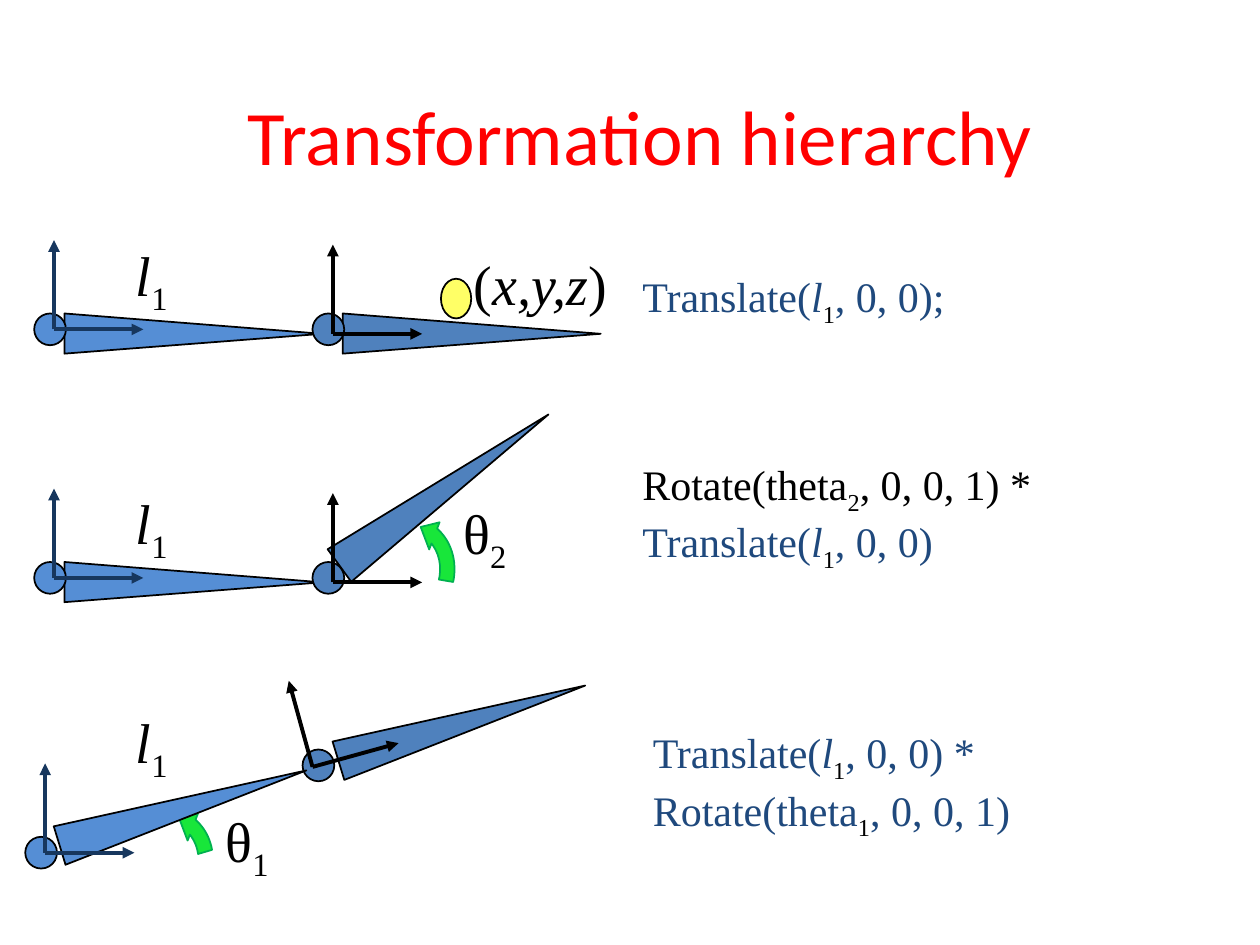
import math
from lxml import etree
from pptx import Presentation
from pptx import util as u
from pptx.dml.color import RGBColor
from pptx.enum import shapes, text
from pptx.oxml import ns

Cm, Pt = u.Cm, u.Pt
SERIF = "Times New Roman"
BLACK, NAVY, BLUE = "000000", "17375E", "1F497D"
LIGHT, DARK = "558ED5", "4F81BD"
MOVE = [("Translate(", ""), ("l", "i"), ("1", "s")]


def tint(part, color):
    """Give a fill or a font colour its hex value."""
    if hasattr(part, "solid"):
        part.solid()
        part = part.fore_color
    part.rgb = RGBColor.from_string(color)


def paint(shape, fill, line=BLACK):
    shape.shadow.inherit = False
    tint(shape.fill, fill)
    tint(shape.line.fill, line)
    shape.line.width = Pt(1)


def write(frame, lines, size=24, color=BLACK, font=SERIF, sub=BLACK, align=None):
    """Fill a frame; each line is a list of (words, style), i italic, s subscript."""
    for n, line in enumerate(lines):
        para = frame.paragraphs[0] if n == 0 else frame.add_paragraph()
        para.alignment = align
        for words, style in line:
            run = para.add_run()
            run.text = words
            run.font.name, run.font.size = font, Pt(size)
            tint(run.font.color, sub if style == "s" else color)
            if style == "i":
                run.font.italic = True
            if style == "s":
                run._r.get_or_add_rPr().set("baseline", "-25000")


def label(slide, x, y, w, h, lines, **look):
    box = slide.shapes.add_textbox(Cm(x), Cm(y), Cm(w), Cm(h))
    box.text_frame.word_wrap = False
    box.text_frame.auto_size = text.MSO_AUTO_SIZE.SHAPE_TO_FIT_TEXT
    write(box.text_frame, lines, **look)


def oval(slide, x, y, w, h, fill):
    kind = shapes.MSO_SHAPE.OVAL
    paint(slide.shapes.add_shape(kind, Cm(x), Cm(y), Cm(w), Cm(h)), fill)


def arrow(slide, x, y, dx, dy, color):
    line = slide.shapes.add_connector(
        shapes.MSO_CONNECTOR.STRAIGHT, Cm(x), Cm(y), Cm(x + dx), Cm(y + dy))
    tint(line.line.fill, color)
    line.line.width = Pt(2.25)
    etree.SubElement(line.line._get_or_add_ln(), ns.qn("a:tailEnd"), type="triangle")
    etree.SubElement(line._element.spPr, ns.qn("a:effectLst"))


def axes(slide, x, y, color, tilt=0, size=1.8):
    a = math.radians(tilt)
    dx, dy = size * math.cos(a), size * math.sin(a)
    arrow(slide, x, y, dx, -dy, color)
    arrow(slide, x, y, -dy, -dx, color)


def limb(slide, x, y, fill, ink, hub, arm=(0.61, 0), turn=0, tilt=0):
    """Draw a joint at x, y with its tapered arm and its axes."""
    left, top = x + arm[0], y + arm[1]
    pen = slide.shapes.build_freeform(Cm(left), Cm(top))
    pen.add_line_segments([(Cm(left), Cm(top + 0.81)), (Cm(left + 5.2), Cm(top + 0.41))])
    wedge = pen.convert_to_shape()
    wedge.rotation = -turn
    paint(wedge, fill)
    oval(slide, x, y, 0.64, 0.64, fill)
    axes(slide, x + hub[0], y + hub[1], ink, tilt)


def base(slide, x, y, **pose):
    limb(slide, x, y, LIGHT, NAVY, (0.4, 0.32), **pose)


def tip(slide, x, y, hub=(0.41, 0.41), **pose):
    limb(slide, x, y, DARK, BLACK, hub, **pose)


def length(slide, x, y):
    label(slide, x, y, 1.22, 1.63, [[("l", "i"), ("1", "s")]], size=32)


def angle(slide, x, y, end, mark, dx, dy):
    """Draw a curved arrow, and its theta label dx, dy away."""
    kind = shapes.MSO_SHAPE.CIRCULAR_ARROW
    bend = slide.shapes.add_shape(kind, Cm(x), Cm(y), Cm(2.59), Cm(2.34))
    for n, value in enumerate((0.125, 11.42, 204.58, end, 0.125)):
        bend.adjustments[n] = value
    bend.rotation = 110.9
    bend._element.spPr.xfrm.set("flipH", "1")
    paint(bend, "18E63A", "00B050")
    label(slide, x + dx, y + dy, 1.5, 1.63, [[("θ", ""), (mark, "s")]], size=32)


def shift(slide, x, y):
    base(slide, x, y)
    tip(slide, x + 5.61, y)
    length(slide, x + 1.8, y - 1.6)
    label(slide, x + 8.61, y - 1.42, 3.33, 1.63,
          [[("(", ""), ("x,y,z", "i"), (")", "")]], size=32)
    oval(slide, x + 8.2, y - 0.7, 0.61, 0.8, "FFFF66")
    label(slide, x + 12.01, y - 0.99, 6.78, 1.27, [MOVE + [(", 0, 0);", "")]], color=BLUE)


def bend(slide, x, y):
    angle(slide, x + 6.14, y - 0.94, 168.76, "2", 2.26, -0.46)
    base(slide, x, y)
    tip(slide, x + 5.61, y, arm=(0.05, -1.86), turn=35.9)
    length(slide, x + 1.8, y - 1.6)
    box = (x + 12.01, y - 2.21, 8.61, 2.31)
    spin = [("Rotate(theta", ""), ("2", "s"), (", 0, 0, 1) *", "")]
    code = slide.shapes.add_textbox(*map(Cm, box)).text_frame
    code.word_wrap = False
    code.auto_size = text.MSO_AUTO_SIZE.SHAPE_TO_FIT_TEXT
    write(code, [spin, MOVE + [(", 0, 0)", "")]])
    for run in code.paragraphs[1].runs:
        if run.text != "1":
            tint(run.font.color, BLUE)


def swing(slide, x, y):
    angle(slide, x + 1.45, y - 0.61, 184.26, "1", 2.34, -0.13)
    tip(slide, x + 5.59, y - 1.76, hub=(0.2, 0.35), arm=(0.61, -0.94), turn=17, tilt=15.4)
    base(slide, x, y, arm=(0.58, -0.99), turn=17)
    length(slide, x + 1.98, y - 2.74)
    spin = [("Rotate(theta", ""), ("1", "s"), (", 0, 0, 1)", "")]
    label(slide, x + 12.4, y - 2.34, 7.95, 2.31,
          [MOVE + [(", 0, 0) *", "")], spin], color=BLUE)


def head(slide, x, y, w, h):
    title = slide.shapes.title
    title.left, title.top, title.width, title.height = map(Cm, (x, y, w, h))
    title.text_frame.vertical_anchor = text.MSO_ANCHOR.MIDDLE
    write(title.text_frame, [[("Transformation hierarchy", "")]], size=44,
          color="FF0000", font="Calibri", align=text.PP_ALIGN.CENTER)


def main():
    deck = Presentation()
    deck.slide_width, deck.slide_height = Cm(25.4), Cm(19.05)
    slide = deck.slides.add_slide(deck.slide_layouts[5])
    head(slide, 2.11, 1.12, 21.59, 3.18)
    shift(slide, 0.69, 6.32)
    bend(slide, 0.69, 11.33)
    swing(slide, 0.51, 16.87)
    deck.save("out.pptx")


if __name__ == "__main__":
    main()
